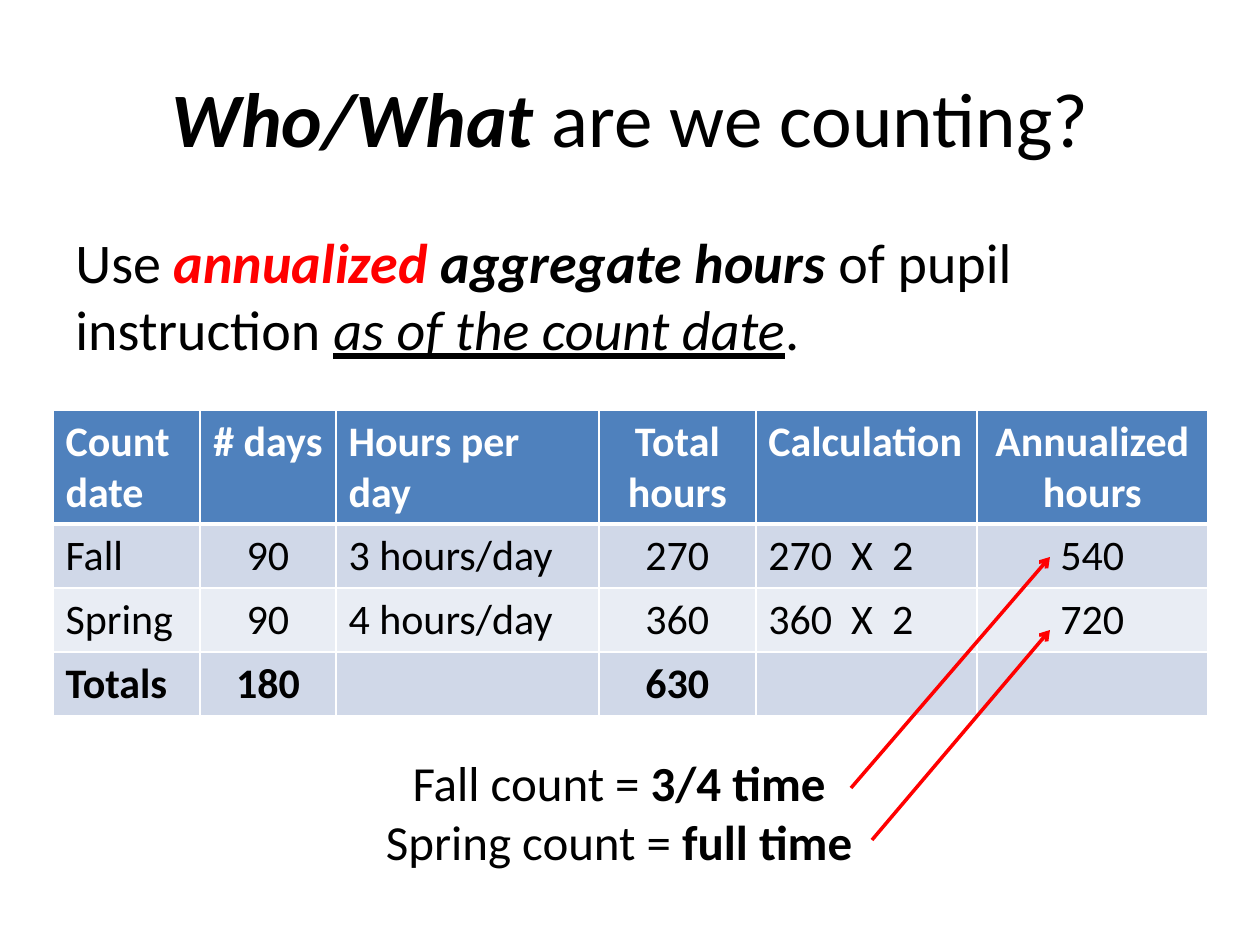
from dataclasses import dataclass

from lxml import etree
from pptx import Presentation
from pptx.dml.color import RGBColor
from pptx.enum.shapes import MSO_CONNECTOR
from pptx.enum.text import MSO_ANCHOR, PP_ALIGN
from pptx.oxml.ns import qn
from pptx.util import Emu, Pt

LEFT, CENTER = PP_ALIGN.LEFT, PP_ALIGN.CENTER
TOP, MIDDLE = MSO_ANCHOR.TOP, MSO_ANCHOR.MIDDLE
STRAIGHT = MSO_CONNECTOR.STRAIGHT
PX_PER_INCH = 126


@dataclass(frozen=True)
class Theme:
    font: str = "Calibri"
    black: str = "000000"
    white: str = "FFFFFF"
    red: str = "FF0000"
    header_fill: str = "4F81BD"
    dark_band: str = "D0D8E8"
    light_band: str = "E9EDF4"
    title_size: int = 44
    body_size: int = 32
    summary_size: int = 28
    table_size: int = 24


THEME = Theme()

COLUMN_WIDTHS = [147, 136, 263, 157, 221, 231]
ROW_HEIGHTS = [114, 64, 64, 64]
COLUMN_ALIGNMENTS = [LEFT, CENTER] * 3
TABLE_ROWS = [
    ["Count date", "# days", "Hours per day", "Total hours", "Calculation", "Annualized hours"],
    ["Fall", "90", "3 hours/day", "270", "270  X  2", "540"],
    ["Spring", "90", "4 hours/day", "360", "360  X  2", "720"],
    ["Totals", "180", "", "630", "", ""],
]


def px(length):
    return Emu(round(length * 914400 / PX_PER_INCH))


def add_run(paragraph, text, size, color=THEME.black, bold=False, italic=False, underline=False):
    run = paragraph.add_run()
    run.text = text
    font = run.font
    font.name, font.size = THEME.font, Pt(size)
    font.bold, font.italic, font.underline = bold, italic, underline
    font.color.rgb = RGBColor.from_string(color)


def add_text(slide, box, paragraphs, size, alignment=LEFT, anchor=TOP):
    """Each paragraph is a list of (text, format) runs."""
    frame = slide.shapes.add_textbox(*map(px, box)).text_frame
    frame.word_wrap = True
    frame.vertical_anchor = anchor
    for index, runs in enumerate(paragraphs):
        paragraph = frame.add_paragraph() if index else frame.paragraphs[0]
        paragraph.alignment = alignment
        for text, style in runs:
            add_run(paragraph, text, size, **style)


def add_title(slide, box):
    runs = [("Who/What ", dict(bold=True, italic=True)), ("are we counting?", {})]
    add_text(slide, box, [runs], THEME.title_size, CENTER, MIDDLE)


def add_statement(slide, box):
    runs = [
        ("Use ", {}),
        ("annualized", dict(color=THEME.red, bold=True, italic=True)),
        (" aggregate hours ", dict(bold=True, italic=True)),
        ("of pupil instruction ", {}),
        ("as of the count date", dict(italic=True, underline=True)),
        (".", {}),
    ]
    add_text(slide, box, [runs], THEME.body_size)


def set_borders(cell, widths):
    properties = cell._tc.get_or_add_tcPr()
    for index, (side, width) in enumerate(widths.items()):
        line = etree.Element(qn(f"a:ln{side}"), w=str(Pt(width)))
        fill = etree.SubElement(line, qn("a:solidFill"))
        etree.SubElement(fill, qn("a:srgbClr"), val=THEME.white)
        properties.insert(index, line)


def add_hours_table(slide, left, top):
    shape = slide.shapes.add_table(
        len(TABLE_ROWS), len(COLUMN_WIDTHS), px(left), px(top),
        px(sum(COLUMN_WIDTHS)), px(sum(ROW_HEIGHTS)))
    table = shape.table
    for column, width in zip(table.columns, COLUMN_WIDTHS):
        column.width = px(width)
    for row, height in zip(table.rows, ROW_HEIGHTS):
        row.height = px(height)

    fills = [THEME.header_fill, THEME.dark_band, THEME.light_band, THEME.dark_band]
    for row_index, values in enumerate(TABLE_ROWS):
        is_header = row_index == 0
        color = THEME.white if is_header else THEME.black
        bold = is_header or values[0] == "Totals"
        borders = {"L": 1, "R": 1, "T": 3 if row_index == 1 else 1, "B": 3 if is_header else 1}
        for column_index, value in enumerate(values):
            cell = table.cell(row_index, column_index)
            cell.fill.solid()
            cell.fill.fore_color.rgb = RGBColor.from_string(fills[row_index])
            set_borders(cell, borders)
            paragraph = cell.text_frame.paragraphs[0]
            paragraph.alignment = COLUMN_ALIGNMENTS[column_index]
            if value:
                add_run(paragraph, value, THEME.table_size, color, bold)


def add_arrow(slide, start, end):
    arrow = slide.shapes.add_connector(STRAIGHT, *map(px, start + end))
    arrow.line.color.rgb = RGBColor.from_string(THEME.red)
    arrow.line.width = Pt(2)
    etree.SubElement(arrow.line._get_or_add_ln(), qn("a:tailEnd"), type="arrow")
    etree.SubElement(arrow._element.spPr, qn("a:effectLst"))


def add_summary(slide, box):
    left, top, width, height = box
    paragraphs = [
        [("Fall count = ", {}), ("3/4 time", dict(bold=True))],
        [("Spring count = ", {}), ("full time", dict(bold=True))],
    ]
    add_text(slide, box, paragraphs, THEME.summary_size, CENTER)
    # Arrows from each line to its annualized hours
    add_arrow(slide, (left + 526, top + 42), (left + 725, top - 189))
    add_arrow(slide, (left + 547, top + 94), (left + 725, top - 116))


def main():
    presentation = Presentation()
    presentation.slide_width, presentation.slide_height = px(1260), px(945)
    slide = presentation.slides.add_slide(presentation.slide_layouts[6])
    add_title(slide, (63, 38, 1134, 157))
    add_statement(slide, (63, 221, 1134, 168))
    add_hours_table(slide, 53, 410)
    add_summary(slide, (325, 746, 588, 131))
    presentation.save("out.pptx")


if __name__ == "__main__":
    main()
